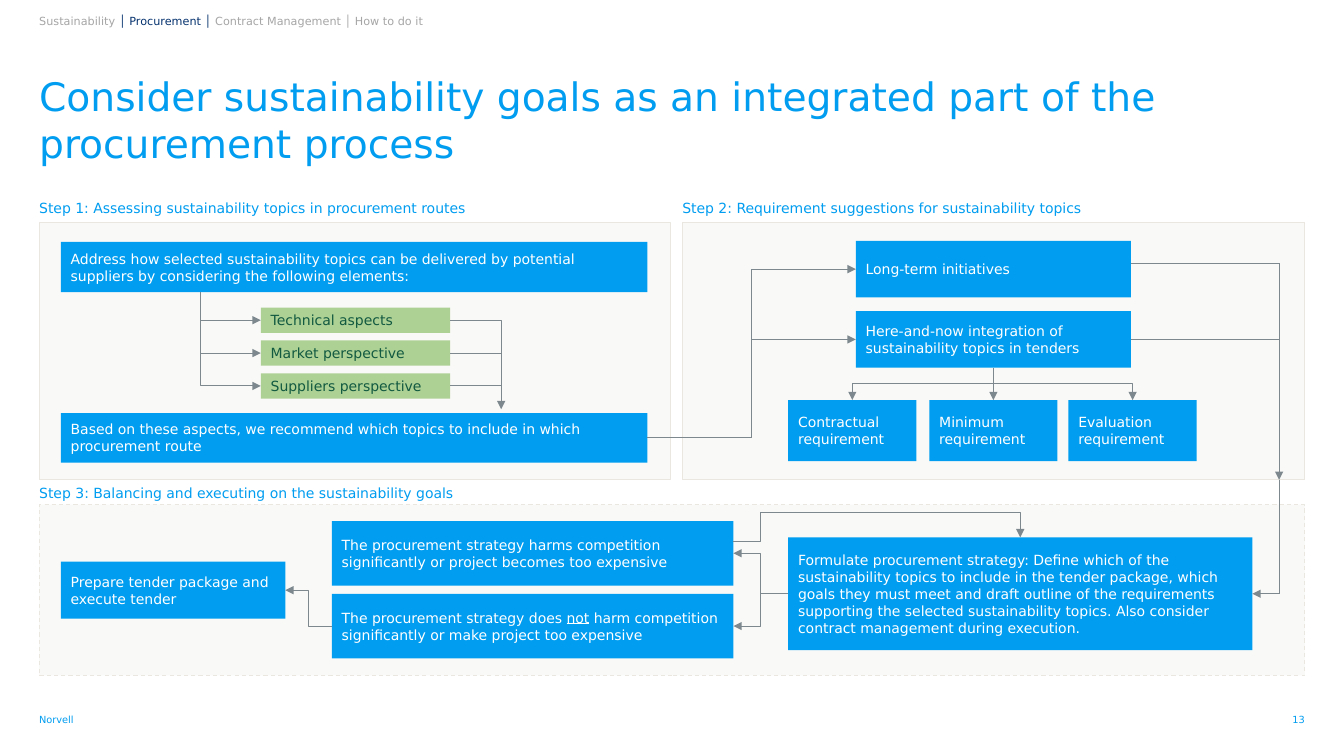
import pptx
import pptx.dml.color
import pptx.enum.dml
import pptx.enum.shapes
import pptx.enum.text
import pptx.oxml.ns
import pptx.util
from lxml import etree

Pt = pptx.util.Pt
RGB = pptx.dml.color.RGBColor
ANCHOR = pptx.enum.text.MSO_ANCHOR
ALIGN = pptx.enum.text.PP_ALIGN
CONNECTOR = pptx.enum.shapes.MSO_CONNECTOR
qn = pptx.oxml.ns.qn

BLUE = RGB(0x00, 0x9D, 0xF0)
NAVY = RGB(0x05, 0x32, 0x6E)
GREEN = RGB(0xAD, 0xD0, 0x95)
DARK_GREEN = RGB(0x12, 0x5A, 0x40)
WHITE = RGB(0xFF, 0xFF, 0xFF)
PANEL = RGB(0xF9, 0xF9, 0xF7)
PANEL_EDGE = RGB(0xE9, 0xE7, 0xE0)
LIGHT_GREY = RGB(0xA6, 0xA6, 0xA6)
LINE_GREY = RGB(0x7D, 0x88, 0x8E)
TOP, LEFT, BOTTOM, RIGHT = range(4)


class FlowSlide:
    font_name = "DejaVu Sans"
    line_width = 0.75

    def __init__(self, slide):
        self.slide = slide

    def add_runs(self, frame, runs, size, color, align=ALIGN.LEFT):
        """Fill a frame with runs, each a string or a (string, font settings) pair."""
        frame.word_wrap = True
        paragraph = frame.paragraphs[0]
        paragraph.alignment = align
        for item in runs:
            words, changes = (item, {}) if isinstance(item, str) else item
            run = paragraph.add_run()
            run.text = words
            settings = {"name": self.font_name, "size": Pt(size), "color": color, **changes}
            run.font.color.rgb = settings.pop("color")
            for key, value in settings.items():
                setattr(run.font, key, value)

    def text(self, place, *runs, size=10, color=BLUE, anchor=ANCHOR.TOP, align=ALIGN.LEFT):
        frame = self.slide.shapes.add_textbox(*map(Pt, place)).text_frame
        layout = {"margin_left": 0, "margin_top": 0, "margin_right": 0,
                  "margin_bottom": 0, "vertical_anchor": anchor}
        for key, value in layout.items():
            setattr(frame, key, value)
        self.add_runs(frame, runs, size, color, align)

    def rectangle(self, place, fill):
        shape = self.slide.shapes.add_shape(
            pptx.enum.shapes.MSO_SHAPE.RECTANGLE, *map(Pt, place))
        shape.shadow.inherit = False
        shape.fill.solid()
        shape.fill.fore_color.rgb = fill
        return shape

    def panel(self, place, dash=None):
        line = self.rectangle(place, PANEL).line
        line.color.rgb = PANEL_EDGE
        line.width = Pt(self.line_width)
        line.dash_style = dash

    def box(self, place, *runs, fill=BLUE, color=WHITE):
        shape = self.rectangle(place, fill)
        shape.line.fill.background()
        shape.text_frame.vertical_anchor = ANCHOR.MIDDLE
        self.add_runs(shape.text_frame, runs, 10, color)
        return shape

    def connector(self, kind, start, end, arrow):
        link = self.slide.shapes.add_connector(kind, *map(Pt, (*start, *end)))
        link.line.color.rgb = LINE_GREY
        link.line.width = Pt(self.line_width)
        properties = link._element.spPr
        if arrow:
            etree.SubElement(properties.find(qn("a:ln")), qn("a:tailEnd"), type="triangle")
        etree.SubElement(properties, qn("a:effectLst"))
        return link

    def straight(self, start, end, arrow=False, begin=None, finish=None):
        """Draw a line; begin and finish are (shape, side) pairs to join."""
        link = self.connector(CONNECTOR.STRAIGHT, start, end, arrow)
        if begin:
            link.begin_connect(*begin)
        if finish:
            link.end_connect(*finish)

    def elbow(self, start, end, preset="bentConnector3", adjust=(), downward=False):
        """Draw a bent arrow that leaves sideways, or downward by a quarter turn."""
        if downward:
            (x1, y1), (x2, y2) = start, end
            middle_x, middle_y = (x1 + x2) / 2, (y1 + y2) / 2
            half_w, half_h = (y2 - y1) / 2, (x1 - x2) / 2
            start = middle_x - half_w, middle_y - half_h
            end = middle_x + half_w, middle_y + half_h
        properties = self.connector(CONNECTOR.ELBOW, start, end, True)._element.spPr
        if downward:
            properties.find(qn("a:xfrm")).set("rot", "5400000")
        geometry = properties.find(qn("a:prstGeom"))
        geometry.set("prst", preset)
        for number, value in enumerate(adjust, 1):
            etree.SubElement(geometry.find(qn("a:avLst")), qn("a:gd"),
                             name=f"adj{number}", fmla=f"val {value}")


def draw_headings(page):
    page.text((28, 10, 334, 10), "Sustainability ",
              ("│ Procurement │", {"color": NAVY}),
              " Contract Management │ How to do it", size=8, color=LIGHT_GREY)
    page.text((28, 51.8, 825, 73.4), "Consider sustainability goals as an integrated "
              "part of the procurement process", size=28)
    page.text((28, 501, 61, 17.5), "Norvell", size=7, anchor=ANCHOR.BOTTOM)
    page.text((882.7, 509.8, 49.3, 8.7), "13", size=7,
              anchor=ANCHOR.BOTTOM, align=ALIGN.RIGHT)
    page.text((28, 142.8, 427, 12),
              "Step 1: Assessing sustainability topics in procurement routes")
    page.text((487.4, 142.8, 455, 12),
              "Step 2: Requirement suggestions for sustainability topics")
    page.text((28, 345.8, 696, 12),
              "Step 3: Balancing and executing on the sustainability goals")


def draw_assessment(page):
    page.box((43.4, 172.8, 419, 36), "Address how selected sustainability topics can be "
             "delivered by potential suppliers by considering the following elements:")
    page.box((43.4, 295, 419, 35.4), "Based on these aspects, we recommend which "
             "topics to include in which procurement route")
    trunk, collector, left, width, height = 143.2, 358, 186.3, 135.2, 18
    for row, aspect in enumerate(("Technical aspects", "Market perspective",
                                  "Suppliers perspective")):
        top = 219.7 + 23.5 * row
        middle = top + height / 2
        tag = page.box((left, top, width, height), aspect, fill=GREEN, color=DARK_GREEN)
        if row == 0:
            page.straight((trunk, middle), (left, middle), True, finish=(tag, LEFT))
            page.elbow((left + width, middle), (collector, 292.3), "bentConnector2")
        else:
            page.elbow((trunk, 208.8), (left, middle), "bentConnector2", downward=True)
            page.straight((left + width, middle), (collector, middle), begin=(tag, RIGHT))


def draw_requirements(page, rail):
    page.box((611.3, 172.1, 196.6, 40.4), "Long-term initiatives")
    tenders = page.box((611.3, 222.3, 196.6, 40.4),
                       "Here-and-now integration of sustainability topics in tenders")
    for target in (242.5, 192.3):
        page.elbow((462.4, 312.6), (611.3, target))
    fork = 709.6, 262.7
    for left, kind in ((563, "Contractual"), (663.8, "Minimum"), (763.2, "Evaluation")):
        requirement = page.box((left, 285.8, 91.6, 43.6), f"{kind} requirement")
        entry = left + 45.8, 285.8
        if kind == "Minimum":
            page.straight(fork, entry, True, (tenders, BOTTOM), (requirement, TOP))
        else:
            page.elbow(fork, entry, downward=True)
    page.straight((807.9, 188.2), (rail, 188.2))
    page.straight((807.9, 242.5), (rail, 242.5), begin=(tenders, RIGHT))
    page.straight((rail, 188.2), (rail, 342.8), True)


def draw_execution(page, rail):
    strategy = page.box(
        (563, 383.8, 331.6, 80.6), "Formulate procurement strategy: Define which of the "
        "sustainability topics to include in the tender package, which goals they must meet "
        "and draft outline of the requirements supporting the selected sustainability topics. "
        "Also consider contract management during execution.")
    page.box((237, 372.2, 286.9, 46.1), "The procurement strategy harms competition "
             "significantly or project becomes too expensive")
    page.box((237, 424.2, 286.9, 46), "The procurement strategy does ",
             ("not", {"underline": True}),
             " harm competition significantly or make project too expensive")
    page.box((43.4, 401.2, 160.4, 40.8), "Prepare tender package and execute tender")
    page.straight((rail, 342.8), (rail, 424.1))
    page.straight((rail, 424.1), (894.6, 424.1), True, finish=(strategy, RIGHT))
    for target in (395.2, 447.2):
        page.elbow((563, 424.1), (523.9, target))
    page.elbow((237, 447.2), (203.8, 421.6))
    page.elbow((523.9, 386.7), (728.8, 383.8), "bentConnector4", (9500, 710000))


def main():
    deck = pptx.Presentation()
    deck.slide_width, deck.slide_height = Pt(960), Pt(540)
    page = FlowSlide(deck.slides.add_slide(deck.slide_layouts[6]))
    rail = 913.7
    page.panel((28, 159, 451, 183.6))
    page.panel((487.4, 159, 444.6, 183.6))
    page.panel((28, 360.5, 904, 122), pptx.enum.dml.MSO_LINE.DASH)
    draw_headings(page)
    draw_assessment(page)
    draw_requirements(page, rail)
    draw_execution(page, rail)
    deck.save("out.pptx")


if __name__ == "__main__":
    main()
